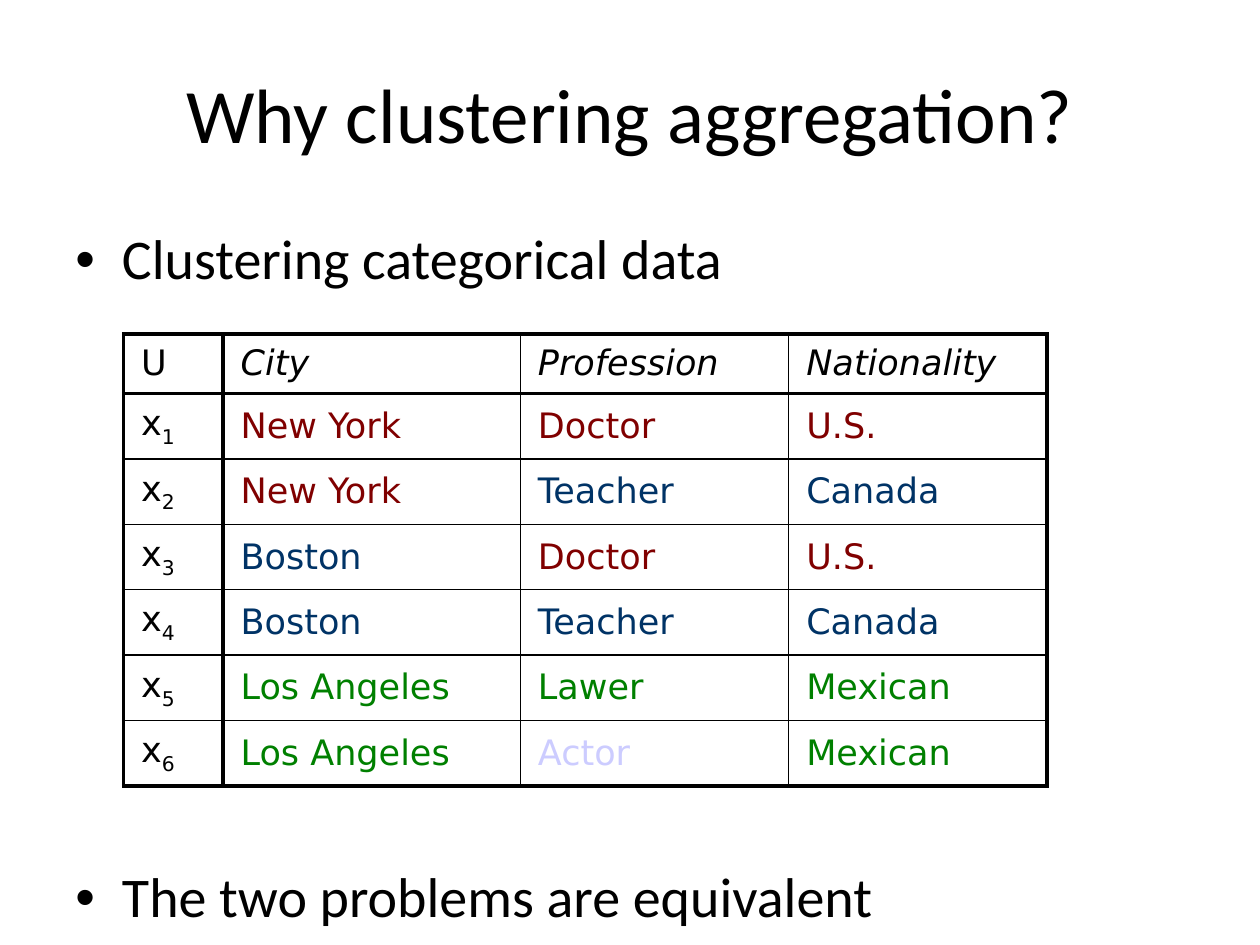
import lxml.etree
import pptx
import pptx.dml.color
import pptx.enum.text
import pptx.oxml.ns
import pptx.util

Inches, Pt = pptx.util.Inches, pptx.util.Pt
RGB = pptx.dml.color.RGBColor.from_string
ANCHOR = pptx.enum.text.MSO_ANCHOR
ALIGN = pptx.enum.text.PP_ALIGN

TITLE = "Why clustering aggregation?"
# text, space before in points (the second bullet sits below the table)
BULLETS = [("Clustering categorical data", 8),
           ("The two problems are equivalent", 327)]
HEADINGS = ["U", "City", "Profession", "Nationality"]
# each value with its cluster colour
RECORDS = [
    [("New York", "red"), ("Doctor", "red"), ("U.S.", "red")],
    [("New York", "red"), ("Teacher", "blue"), ("Canada", "blue")],
    [("Boston", "blue"), ("Doctor", "red"), ("U.S.", "red")],
    [("Boston", "blue"), ("Teacher", "blue"), ("Canada", "blue")],
    [("Los Angeles", "green"), ("Lawer", "green"), ("Mexican", "green")],
    [("Los Angeles", "green"), ("Actor", "pale"), ("Mexican", "green")],
]

THEME = {
    "colors": {"black": "000000", "red": "800000", "blue": "003366",
               "green": "008000", "pale": "CCCCFF"},
    "title": {"name": "Calibri", "size": Pt(44)},
    "body": {"name": "Calibri", "size": Pt(32)},
    "cell": {"name": "DejaVu Sans", "size": Pt(20)},
    "thick": 2.25,
    "thin": 1,
}
COLUMN_WIDTHS = [0.79, 2.36, 2.13, 2.05]
HEADER_HEIGHT, RECORD_HEIGHT = 0.46, 0.505
LINE_SPACING = 0.98
BULLET_INDENT = 0.37


def set_all(target, values):
    for name, value in values.items():
        setattr(target, name, value)


def add_run(paragraph, text, style, color="black", **extra):
    run = paragraph.add_run()
    run.text = text
    set_all(run.font, {**THEME[style], **extra})
    run.font.color.rgb = RGB(THEME["colors"][color])
    return run


def add_frame(slide, left, top, width, height, anchor):
    box = slide.shapes.add_textbox(*map(Inches, (left, top, width, height)))
    set_all(box.text_frame, {"word_wrap": True, "vertical_anchor": anchor})
    return box.text_frame


def add_bullet(paragraph):
    properties = paragraph._p.get_or_add_pPr()
    indent = Inches(BULLET_INDENT)
    properties.set("marL", str(indent))
    properties.set("indent", str(-indent))
    for tag, attribute, value in (("a:buFont", "typeface", "Arial"),
                                  ("a:buChar", "char", "•")):
        mark = lxml.etree.SubElement(properties, pptx.oxml.ns.qn(tag))
        mark.set(attribute, value)


def add_borders(cell, row, column):
    """Draw thick lines round the table and beside the header row and column."""
    last_row, last_column = len(RECORDS), len(HEADINGS) - 1
    thick_sides = {"L": column <= 1, "R": column in (0, last_column),
                   "T": row <= 1, "B": row in (0, last_row)}
    properties = cell._tc.get_or_add_tcPr()
    for side, is_thick in thick_sides.items():
        line = lxml.etree.SubElement(properties, pptx.oxml.ns.qn(f"a:ln{side}"))
        line.set("w", str(Pt(THEME["thick" if is_thick else "thin"])))
        fill = lxml.etree.SubElement(line, pptx.oxml.ns.qn("a:solidFill"))
        color = lxml.etree.SubElement(fill, pptx.oxml.ns.qn("a:srgbClr"))
        color.set("val", THEME["colors"]["black"])


def add_title(slide):
    paragraph = add_frame(slide, 0.5, 0.14, 9, 1.57, ANCHOR.MIDDLE).paragraphs[0]
    set_all(paragraph, {"alignment": ALIGN.CENTER, "line_spacing": LINE_SPACING})
    add_run(paragraph, TITLE, "title")


def add_bullets(slide):
    frame = add_frame(slide, 0.5, 1.75, 9, 5.15, ANCHOR.TOP)
    for index, (text, gap) in enumerate(BULLETS):
        paragraph = frame.add_paragraph() if index else frame.paragraphs[0]
        set_all(paragraph, {"space_before": Pt(gap), "line_spacing": LINE_SPACING})
        add_bullet(paragraph)
        add_run(paragraph, text, "body")


def fill_cell(cell, row, column):
    paragraph = cell.text_frame.paragraphs[0]
    if row == 0:
        add_run(paragraph, HEADINGS[column], "cell", italic=column > 0)
    elif column == 0:
        add_run(paragraph, "x", "cell")
        subscript = add_run(paragraph, str(row), "cell")
        subscript._r.get_or_add_rPr().set("baseline", "-25000")
    else:
        text, color = RECORDS[row - 1][column - 1]
        add_run(paragraph, text, "cell", color)


def add_records(slide):
    heights = [HEADER_HEIGHT] + [RECORD_HEIGHT] * len(RECORDS)
    table = slide.shapes.add_table(
        len(heights), len(HEADINGS), Inches(0.98), Inches(2.65),
        Inches(sum(COLUMN_WIDTHS)), Inches(sum(heights))).table
    set_all(table, {"first_row": False, "horz_banding": False})
    for column, width in zip(table.columns, COLUMN_WIDTHS):
        column.width = Inches(width)
    cell_format = {"margin_left": Inches(0.14), "margin_right": Inches(0.14),
                   "margin_top": Inches(0.07), "margin_bottom": Inches(0.07),
                   "vertical_anchor": ANCHOR.MIDDLE}
    for row, height in enumerate(heights):
        table.rows[row].height = Inches(height)
        for column in range(len(HEADINGS)):
            cell = table.cell(row, column)
            set_all(cell, cell_format)
            add_borders(cell, row, column)
            cell.fill.background()
            fill_cell(cell, row, column)


def main():
    deck = pptx.Presentation()
    set_all(deck, {"slide_width": Inches(10), "slide_height": Inches(7.5)})
    slide = deck.slides.add_slide(deck.slide_layouts[6])
    add_title(slide)
    add_bullets(slide)
    add_records(slide)
    deck.save("out.pptx")


if __name__ == "__main__":
    main()
